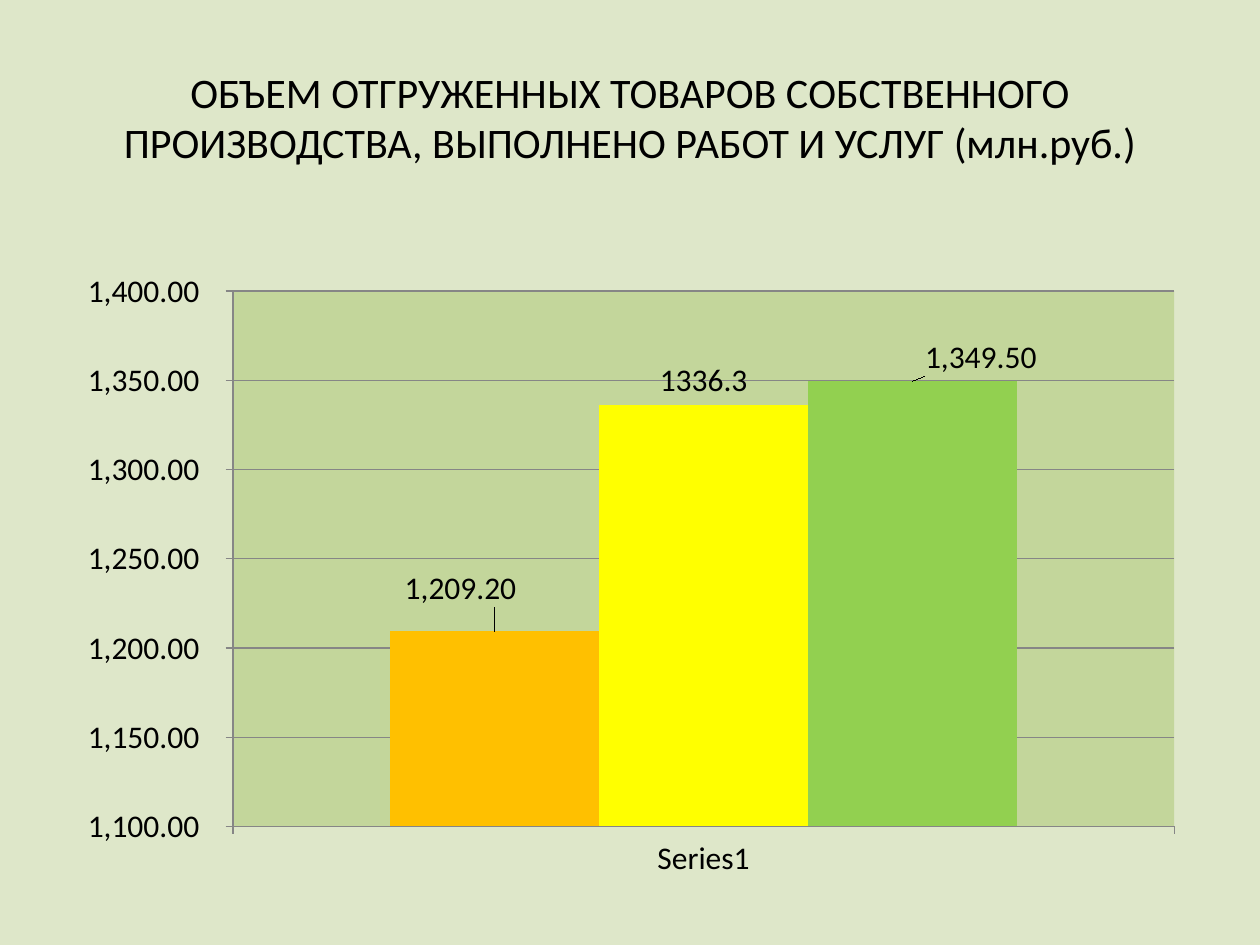
from lxml import etree
from pptx import Presentation
from pptx.chart import data as chart_data
from pptx.dml.color import RGBColor
from pptx.enum import chart as ch, text
from pptx.oxml import ns
from pptx.util import Inches, Pt

COLORS = {
    "background": "DEE7C9", "text": "000000", "plot": "C3D69B", "line": "868686",
    "orange": "FFC000", "yellow": "FFFF00", "green": "92D050",
}
# name, value, colour, label format, label shift as a fraction of the chart
SERIES = [
    ("Series 1", 1209.2, "orange", "#,##0.00", (-0.03, -0.03)),
    ("Series 2", 1336.3, "yellow", "General", None),
    ("Series 3", 1349.5, "green", "#,##0.00", (0.06, 0)),
]


def rgb(name):
    return RGBColor.from_string(COLORS[name])


def manual_layout(**values):
    """Return a c:layout element holding the given settings in order."""
    layout = etree.Element(ns.qn("c:layout"))
    manual = etree.SubElement(layout, ns.qn("c:manualLayout"))
    for tag, value in values.items():
        etree.SubElement(manual, ns.qn(f"c:{tag}")).set("val", str(value))
    return layout


presentation = Presentation()
presentation.slide_width, presentation.slide_height = Inches(10), Inches(7.5)
slide = presentation.slides.add_slide(presentation.slide_layouts[5])
slide.background.fill.solid()
slide.background.fill.fore_color.rgb = rgb("background")

# Title
title = slide.shapes.title
title.left, title.top = Inches(0.5), Inches(0.3)
title.width, title.height = Inches(9), Inches(1.25)
frame = title.text_frame
frame.text = ("ОБЪЕМ ОТГРУЖЕННЫХ ТОВАРОВ СОБСТВЕННОГО ПРОИЗВОДСТВА, "
              "ВЫПОЛНЕНО РАБОТ И УСЛУГ (млн.руб.)")
frame.word_wrap = True
frame.vertical_anchor = text.MSO_ANCHOR.MIDDLE
paragraph = frame.paragraphs[0]
paragraph.alignment = text.PP_ALIGN.CENTER
for attribute, value in {"name": "Calibri", "size": Pt(24)}.items():
    setattr(paragraph.runs[0].font, attribute, value)
paragraph.runs[0].font.color.rgb = rgb("text")

# Column chart
output = chart_data.CategoryChartData()
output.categories = ["Series1"]
for name, value, *_ in SERIES:
    output.add_series(name, [value])
chart = slide.shapes.add_chart(
    ch.XL_CHART_TYPE.COLUMN_CLUSTERED,
    Inches(0.5), Inches(2.06), Inches(9), Inches(5), output).chart
chart.has_legend = chart.has_title = False
chart.font.name, chart.font.size = "Calibri", Pt(18)
chart.font.color.rgb = rgb("text")

# Axes
value_axis = chart.value_axis
axis_format = {"minimum_scale": 1100, "maximum_scale": 1400, "major_unit": 50,
               "has_major_gridlines": True}
for attribute, value in axis_format.items():
    setattr(value_axis, attribute, value)
value_axis.tick_labels.number_format = "#,##0.00_р_."
value_axis.tick_labels.number_format_is_linked = False
for axis in (value_axis, chart.category_axis):
    axis.major_tick_mark = ch.XL_TICK_MARK.OUTSIDE
for line in (value_axis.format.line, chart.category_axis.format.line,
             value_axis.major_gridlines.format.line):
    line.color.rgb = rgb("line")
    line.width = Pt(0.75)

# Plot area
plot = chart.plots[0]
plot.gap_width, plot.overlap, plot.vary_by_categories = 150, 0, False
plot_area = chart._chartSpace.chart.plotArea
for layout in plot_area.findall(ns.qn("c:layout")):
    plot_area.remove(layout)
plot_area.insert(0, manual_layout(layoutTarget="inner", xMode="edge", yMode="edge",
                                  x=0.15, y=0.05, w=0.83, h=0.85))
plot_area.append(etree.fromstring(
    f'<c:spPr {ns.nsdecls("c", "a")}><a:solidFill><a:srgbClr val="{COLORS["plot"]}"/>'
    '</a:solidFill><a:ln><a:noFill/></a:ln></c:spPr>'))

# Columns and their labels
for series, (_, _, color, number_format, shift) in zip(plot.series, SERIES):
    series.format.fill.solid()
    series.format.fill.fore_color.rgb = rgb(color)
    series.invert_if_negative = False
    label_format = {"show_value": True, "number_format": number_format,
                    "number_format_is_linked": False,
                    "position": ch.XL_LABEL_POSITION.OUTSIDE_END}
    for attribute, value in label_format.items():
        setattr(series.data_labels, attribute, value)
    if shift:
        label = series.points[0].data_label
        label.font.size = Pt(18)
        label.position = ch.XL_LABEL_POSITION.OUTSIDE_END
        index = series.data_labels._element.find(
            f'{ns.qn("c:dLbl")}/{ns.qn("c:idx")}')
        number = etree.Element(ns.qn("c:numFmt"), formatCode=number_format,
                               sourceLinked="0")
        index.addnext(number)
        index.addnext(manual_layout(x=shift[0], y=shift[1]))

presentation.save("out.pptx")
